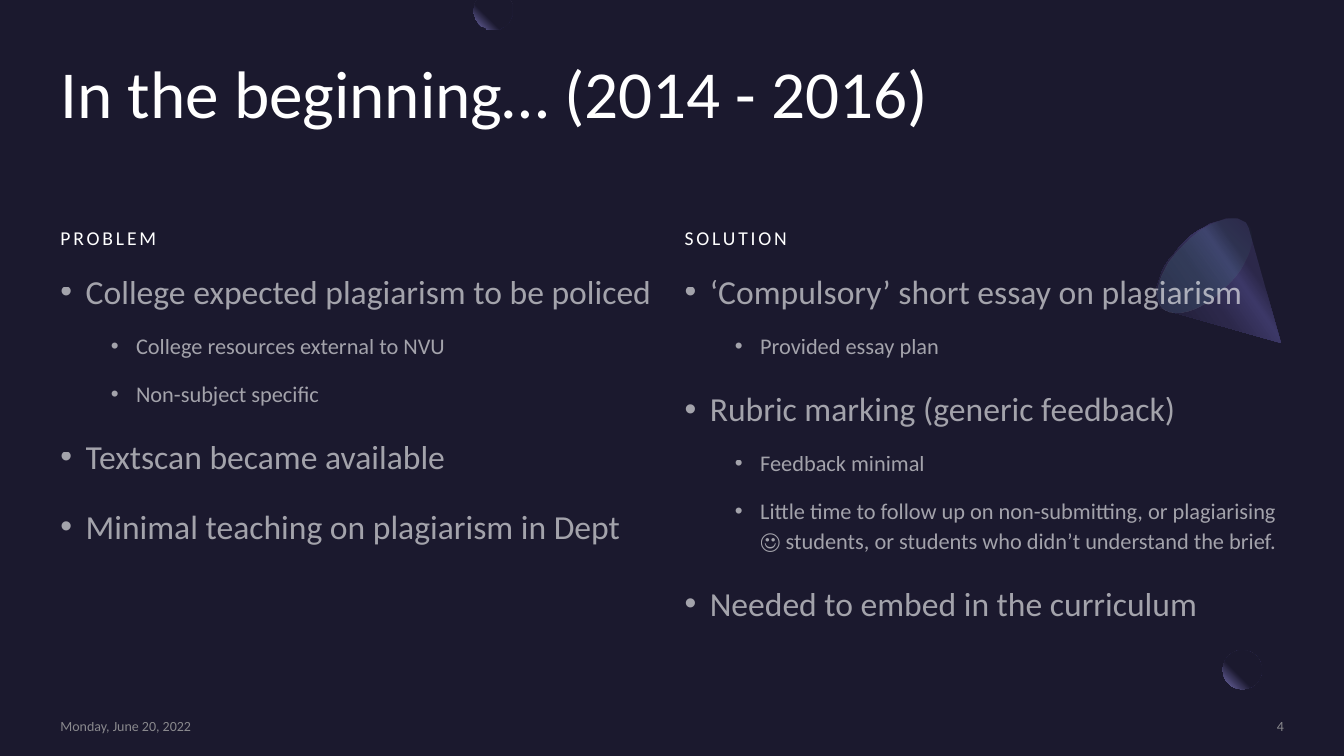
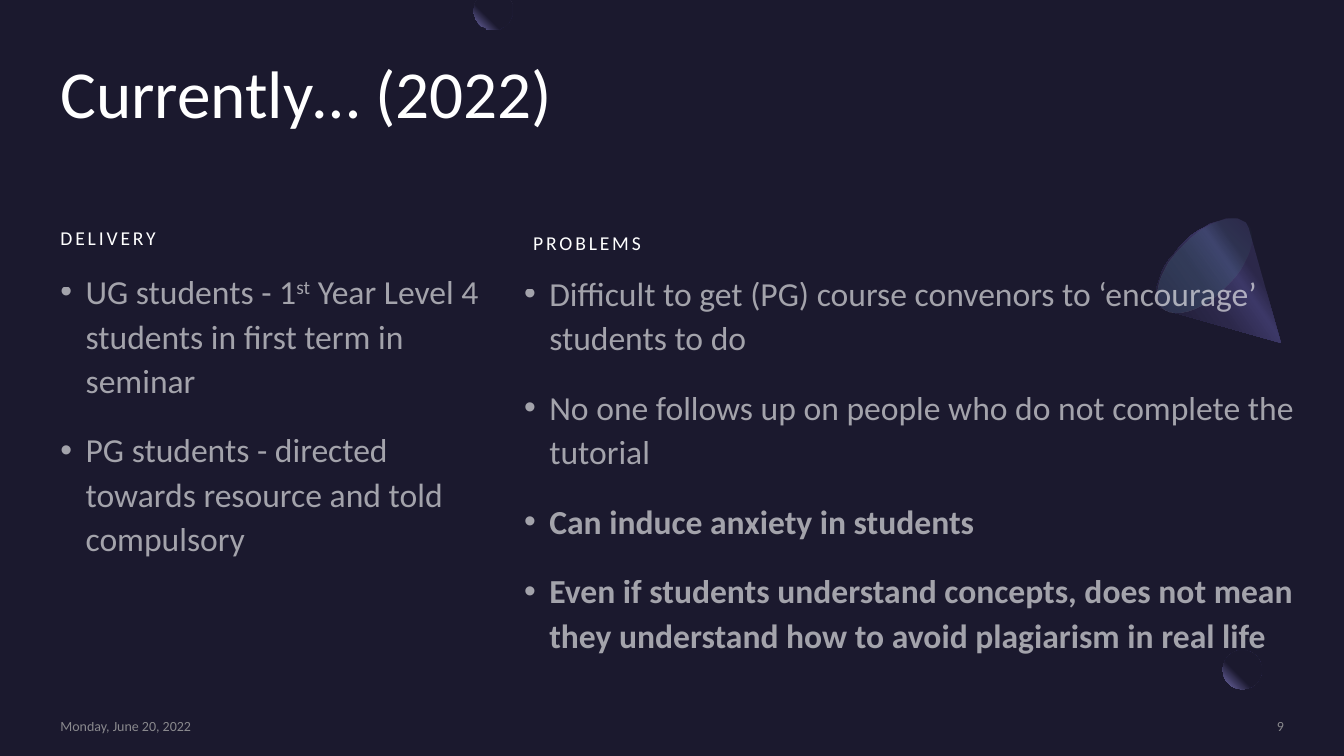
import math

from lxml import etree
from pptx import Presentation
from pptx.dml import color
from pptx.enum import shapes, text
from pptx.oxml import ns
from pptx.util import Pt

FONT = "Calibri"
BG, WHITE, GREY = "1B192E", "FFFFFF", "A6A6A6"
GLOW = [(60, BG, 100), (100, "7771B2", 100)]
CONE = [(30, "2C284A", 100), (40, "3C3867", 100), (60, "2C284A", 100), (100, BG, 100)]
RIM = [(0, "454075", 33), (100, "5BEFC1", 0)]
LEFT, WIDTH = 43.2, 874

SLIDES = [
    dict(
        title="In the beginning… (2014 - 2016)",
        number="4",
        columns=[
            dict(
                heading="PROBLEM", head_box=(LEFT, 136, 428, 42.5), box=(LEFT, 190.8, 428, 276.5),
                items=[
                    ("College expected plagiarism to be policed", {}),
                    ("College resources external to NVU", dict(level=1)),
                    ("Non-subject specific", dict(level=1)),
                    ("Textscan became available", {}),
                    ("Minimal teaching on plagiarism in Dept", {}),
                ],
            ),
            dict(
                heading="SOLUTION", head_box=(489, 136, 428, 42.5), box=(489, 190.8, 428, 276.5),
                items=[
                    ("‘Compulsory’ short essay on plagiarism", {}),
                    ("Provided essay plan", dict(level=1)),
                    ("Rubric marking (generic feedback)", {}),
                    ("Feedback minimal", dict(level=1)),
                    ("Little time to follow up on non-submitting, or plagiarising ☺ students, "
                     "or students who didn’t understand the brief.", dict(level=1)),
                    ("Needed to embed in the curriculum", {}),
                ],
            ),
        ],
    ),
    dict(
        title="Currently… (2022)",
        number="9",
        columns=[
            dict(
                heading="DELIVERY", head_box=(LEFT, 136, 281, 42.5), box=(LEFT, 190.8, 313, 276.5),
                items=[
                    ("UG students - 1^st^ Year Level 4 students in first term in seminar", {}),
                    ("PG students - directed towards resource and told compulsory", {}),
                ],
            ),
            dict(
                heading="PROBLEMS", head_box=(380.9, 139, 428, 42.5), box=(374.4, 192.2, 570, 276.5),
                items=[
                    ("Difficult to get (PG) course convenors to ‘encourage’ students to do", {}),
                    ("No one follows up on people who do not complete the tutorial", {}),
                    ("Can induce anxiety in students", dict(bold=True)),
                    ("Even if students understand concepts, does not mean they understand "
                     "how to avoid plagiarism in real life", dict(bold=True)),
                ],
            ),
        ],
    ),
]


def rgb(value):
    return color.RGBColor.from_string(value)


def add_xml(parent, tag, **attrs):
    return etree.SubElement(parent, ns.qn(tag), {k: str(v) for k, v in attrs.items()})


def place(sp, box):
    sp.left, sp.top, sp.width, sp.height = map(Pt, box)


def gradient(sp, stops, angle=None):
    sp.shadow.inherit = False
    sp.line.fill.background()
    sp.fill.gradient()
    fill = sp._element.spPr.find(ns.qn("a:gradFill"))
    for child in list(fill):
        fill.remove(child)
    gs_list = add_xml(fill, "a:gsLst")
    for position, value, alpha in stops:
        gs = add_xml(gs_list, "a:gs", pos=position * 1000)
        add_xml(add_xml(gs, "a:srgbClr", val=value), "a:alpha", val=alpha * 1000)
    if angle is None:
        add_xml(add_xml(fill, "a:path", path="circle"), "a:fillToRect", l=100000, b=100000)
    else:
        add_xml(fill, "a:lin", ang=angle * 60000, scaled=0)


def write(p, content, size=24, value=WHITE, alpha=100, bold=False, spacing=0):
    for i, part in enumerate(content.split("^")):
        r = p.add_run()
        r.text = part
        r.font.name, r.font.size, r.font.bold = FONT, Pt(size), bold
        r.font.color.rgb = rgb(value)
        props = r._r.get_or_add_rPr()
        if alpha < 100:
            add_xml(props.find(".//" + ns.qn("a:srgbClr")), "a:alpha", val=alpha * 1000)
        if spacing:
            props.set("spc", str(spacing * 100))
        if i % 2:
            props.set("baseline", "30000")


def setup_frame(sp, anchor):
    tf = sp.text_frame
    tf.word_wrap, tf.auto_size, tf.vertical_anchor = True, text.MSO_AUTO_SIZE.NONE, anchor
    tf.margin_left = tf.margin_top = tf.margin_right = tf.margin_bottom = 0
    return tf


def text_frame(s, box, anchor=text.MSO_ANCHOR.TOP):
    return setup_frame(s.shapes.add_textbox(*map(Pt, box)), anchor)


def space(p, line, before=0, after=0):
    p.line_spacing, p.space_before, p.space_after = line, Pt(before), Pt(after)


def add_title(s, content, box):
    sp = s.shapes.title
    place(sp, box)
    p = setup_frame(sp, text.MSO_ANCHOR.TOP).paragraphs[0]
    p.alignment = text.PP_ALIGN.LEFT
    space(p, 0.9)
    write(p, content, size=48)


def add_heading(s, content, box):
    p = text_frame(s, box, text.MSO_ANCHOR.BOTTOM).paragraphs[0]
    space(p, 1.1, 10, 8)
    write(p, content, size=14, spacing=2)


def add_bullets(s, items, box):
    tf = text_frame(s, box)
    for i, (content, style) in enumerate(items):
        p = tf.add_paragraph() if i else tf.paragraphs[0]
        level = style.get("level", 0)
        p.level = level
        space(p, 1.1, 5 if level else 10, 8)
        props = p._p.get_or_add_pPr()
        props.set("marL", str(Pt(18 + 36 * level)))
        props.set("indent", str(-Pt(18)))
        add_xml(props, "a:buFont", typeface="Arial")
        add_xml(props, "a:buChar", char="•")
        write(p, content, size=16 if level else 24, alpha=60, bold=style.get("bold", False))


def add_footer(s, number, box):
    left, top, width, height = box
    cells = [
        ("Monday, June 20, 2022", left, 207, text.PP_ALIGN.LEFT),
        (number, left + width - 133, 133, text.PP_ALIGN.RIGHT),
    ]
    for content, x, w, align in cells:
        p = text_frame(s, (x, top, w, height), text.MSO_ANCHOR.MIDDLE).paragraphs[0]
        p.alignment = align
        write(p, content, size=10, value=GREY, alpha=80)


def outline(s, points, left, top):
    points = [(left + x, top + y) for x, y in points]
    builder = s.shapes.build_freeform(*points[0], scale=Pt(1))
    builder.add_line_segments(points[1:], close=True)
    return builder.convert_to_shape()


def curve(a, b, c, d, steps=16):
    def at(t):
        weights = ((1 - t) ** 3, 3 * t * (1 - t) ** 2, 3 * t * t * (1 - t), t ** 3)
        return tuple(sum(w * q[i] for w, q in zip(weights, (a, b, c, d))) for i in (0, 1))
    return [at(n / steps) for n in range(1, steps + 1)]


def add_cone(s, left, top):
    tip, base, side, crown, shoulder = (92.1, 90.8), (10.8, 67.8), (6.4, 65.6), (21.6, 20.2), (66.9, 5.1)
    points = [tip, base, side]
    points += curve(side, (-1.5, 57), (5, 36.8), crown)
    points += curve(crown, (38.1, 3.7), (58.3, -2.8), shoulder)
    points += [(69.1, 8.7)]
    gradient(outline(s, points, left, top), CONE, 145)
    rim = s.shapes.add_shape(shapes.MSO_SHAPE.OVAL, *map(Pt, (left + 15.8, top - 7.1, 42.5, 85)))
    rim.rotation = 225
    gradient(rim, RIM, 90)


def add_dot(s, left, top, size):
    gradient(s.shapes.add_shape(shapes.MSO_SHAPE.OVAL, *map(Pt, (left, top, size, size))), GLOW)


def add_cut_dot(s, left, center, radius):
    start = -math.asin(center / radius)
    sweep = math.pi - 2 * start
    angles = [start + sweep * n / 40 for n in range(41)]
    points = [(radius * (1 + math.cos(a)), center + radius * math.sin(a)) for a in angles]
    gradient(outline(s, points, left, 0), GLOW)


def add_decoration(s):
    add_dot(s, 873.4, 464.4, 28)
    add_cone(s, 823, 154)
    add_cut_dot(s, 338.4, 7.4, 14)


def add_column_slide(prs, data):
    s = prs.slides.add_slide(prs.slide_layouts[5])
    add_decoration(s)
    add_title(s, data["title"], (LEFT, 43.2, WIDTH, 105))
    for column in data["columns"]:
        add_heading(s, column["heading"], column["head_box"])
        add_bullets(s, column["items"], column["box"])
    add_footer(s, data["number"], (LEFT, 512.6, WIDTH, 12.4))


def main():
    prs = Presentation()
    prs.slide_width, prs.slide_height = Pt(960), Pt(540)
    fill = prs.slide_master.background.fill
    fill.solid()
    fill.fore_color.rgb = rgb(BG)
    for data in SLIDES:
        add_column_slide(prs, data)
    prs.save("out.pptx")


if __name__ == "__main__":
    main()
